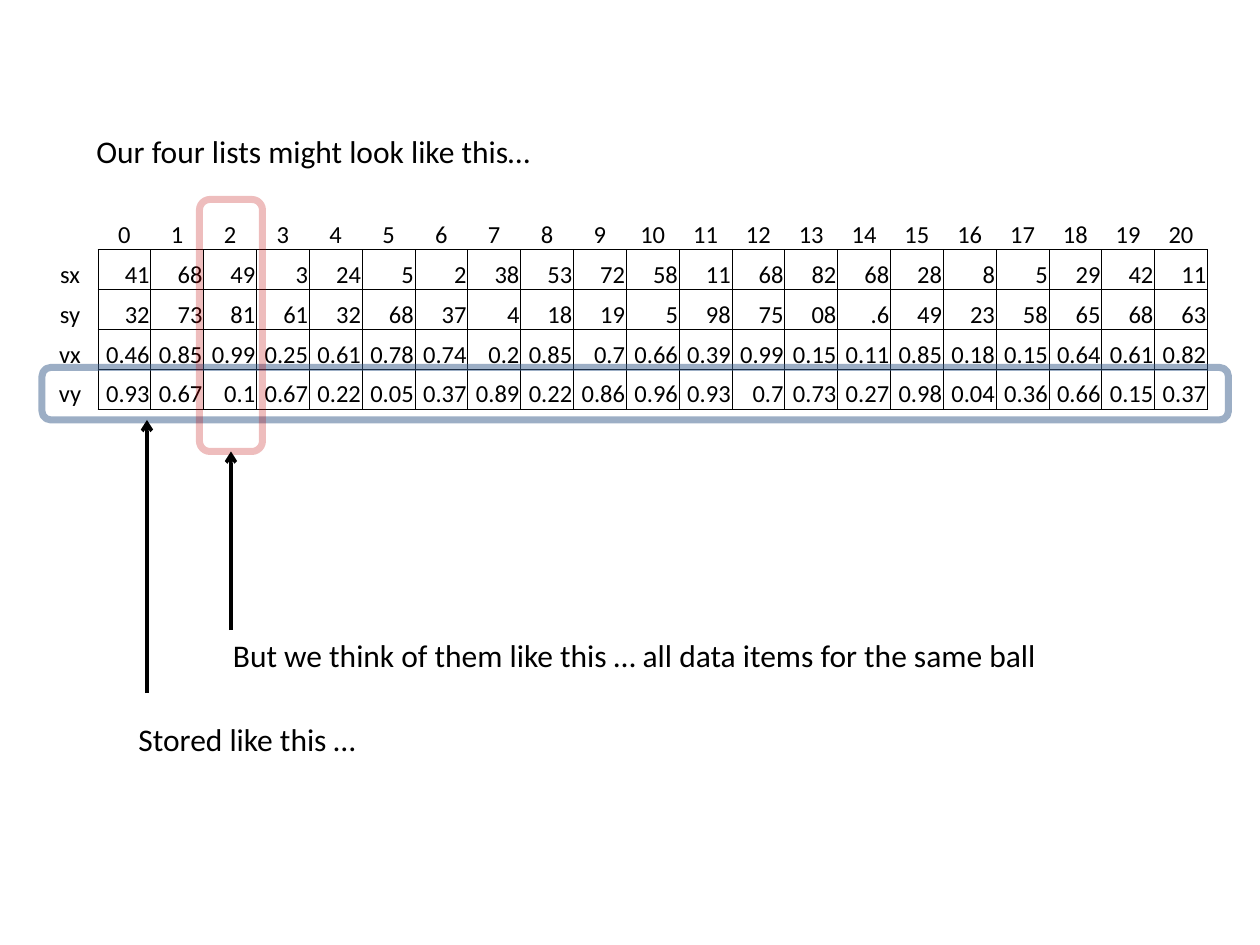
from lxml.etree import SubElement
from pptx import Presentation
from pptx.dml.color import RGBColor
from pptx.enum.shapes import MSO_CONNECTOR, MSO_SHAPE
from pptx.enum.text import MSO_ANCHOR, MSO_AUTO_SIZE, PP_ALIGN
from pptx.oxml import parse_xml
from pptx.oxml.ns import nsdecls, qn
from pptx.util import Pt

# Content
LISTS = {
    "sx": "41 68 49 3 24 5 2 38 53 72 58 11 68 82 68 28 8 5 29 42 11",
    "sy": "32 73 81 61 32 68 37 4 18 19 5 98 75 08 .6 49 23 58 65 68 63",
    "vx": "0.46 0.85 0.99 0.25 0.61 0.78 0.74 0.2 0.85 0.7 0.66 0.39 0.99 "
          "0.15 0.11 0.85 0.18 0.15 0.64 0.61 0.82",
    "vy": "0.93 0.67 0.1 0.67 0.22 0.05 0.37 0.89 0.22 0.86 0.96 0.93 0.7 "
          "0.73 0.27 0.98 0.04 0.36 0.66 0.15 0.37",
}
COUNT = 21
NOTES = [  # text, left, top, width
    ("Our four lists might look like this…", 48, 72, 265),
    ("Stored like this …", 72, 408, 162),
    ("But we think of them like this … all data items for the same ball",
     126, 360, 519),
]
FRAMES = {  # left, top, width, height, colour, opacity in percent
    "list": (24, 210, 678, 30, "3A5F8C", 50),
    "ball": (114, 114, 36, 144, "C00000", 25),
}
ARROWS = [(84, 396, 240, None), (132, 360, 258, "ball")]  # x, from, to, frame

# Table grid
LEFT, TOP, WIDTH, HEIGHT, LABEL = 24, 120, 666, 114, 32
BLACK = "000000"


def paint(color, hue):
    color.rgb = RGBColor.from_string(hue)


def write(frame, text, size=18, align=PP_ALIGN.LEFT, hue=BLACK):
    para = frame.paragraphs[0]
    para.alignment = align
    run = para.add_run()
    run.text = text
    run.font.size = Pt(size)
    run.font.name = "Calibri"
    paint(run.font.color, hue)


def border(cell, sides):
    props = cell._tc.get_or_add_tcPr()
    for spot, side in enumerate(sides):
        props.insert(spot, parse_xml(
            f'<a:ln{side} {nsdecls("a")} w="{Pt(0.5)}"><a:solidFill>'
            f'<a:srgbClr val="{BLACK}"/></a:solidFill></a:ln{side}>'))


def add_lists(shapes):
    rows = [["", *map(str, range(COUNT))]]
    rows += [[name, *nums.split()] for name, nums in LISTS.items()]
    table = shapes.add_table(len(rows), COUNT + 1, Pt(LEFT), Pt(TOP),
                             Pt(WIDTH), Pt(HEIGHT)).table
    table.first_row = table.horz_banding = False
    for c, col in enumerate(table.columns):
        col.width = Pt((WIDTH - LABEL) / COUNT if c else LABEL)
    for r, row in enumerate(rows):
        table.rows[r].height = Pt(HEIGHT / len(rows))
        for c, text in enumerate(row):
            cell = table.cell(r, c)
            cell.margin_left = cell.margin_right = cell.margin_top = Pt(0.7)
            cell.margin_bottom = 0
            cell.vertical_anchor = MSO_ANCHOR.BOTTOM
            cell.fill.background()
            inner = r and c
            write(cell.text_frame, text, size=14,
                  align=PP_ALIGN.RIGHT if inner else PP_ALIGN.CENTER)
            # Headings touch the grid on one side only
            border(cell, "LRTB" if inner else "R" if r else "B" if c else "")


def add_note(shapes, text, left, top, width):
    frame = shapes.add_textbox(Pt(left), Pt(top), Pt(width), Pt(29)).text_frame
    frame.word_wrap = False
    frame.auto_size = MSO_AUTO_SIZE.SHAPE_TO_FIT_TEXT
    write(frame, text)


def add_frame(shapes, left, top, width, height, hue, alpha):
    box = shapes.add_shape(MSO_SHAPE.ROUNDED_RECTANGLE, Pt(left), Pt(top),
                           Pt(width), Pt(height))
    box.shadow.inherit = False
    box.fill.background()
    box.line.width = Pt(4)
    paint(box.line.color, hue)
    tint = box.line._ln.find(".//" + qn("a:srgbClr"))
    SubElement(tint, qn("a:alpha"), val=str(alpha * 1000))
    return box


def add_arrow(shapes, x, start, end, target):
    line = shapes.add_connector(MSO_CONNECTOR.STRAIGHT, Pt(x), Pt(start),
                                Pt(x), Pt(end))
    line.line.width = Pt(2)
    paint(line.line.color, BLACK)
    SubElement(line.line._ln, qn("a:tailEnd"), type="arrow")
    SubElement(line._element.spPr, qn("a:effectLst"))
    if target is not None:
        line.end_connect(target, 2)


def main():
    deck = Presentation()
    deck.slide_width, deck.slide_height = Pt(720), Pt(540)
    shapes = deck.slides.add_slide(deck.slide_layouts[6]).shapes
    add_lists(shapes)
    boxes = {name: add_frame(shapes, *row) for name, row in FRAMES.items()}
    for x, start, end, name in ARROWS:
        add_arrow(shapes, x, start, end, boxes.get(name))
    for note in NOTES:
        add_note(shapes, *note)
    deck.save("out.pptx")


if __name__ == "__main__":
    main()
